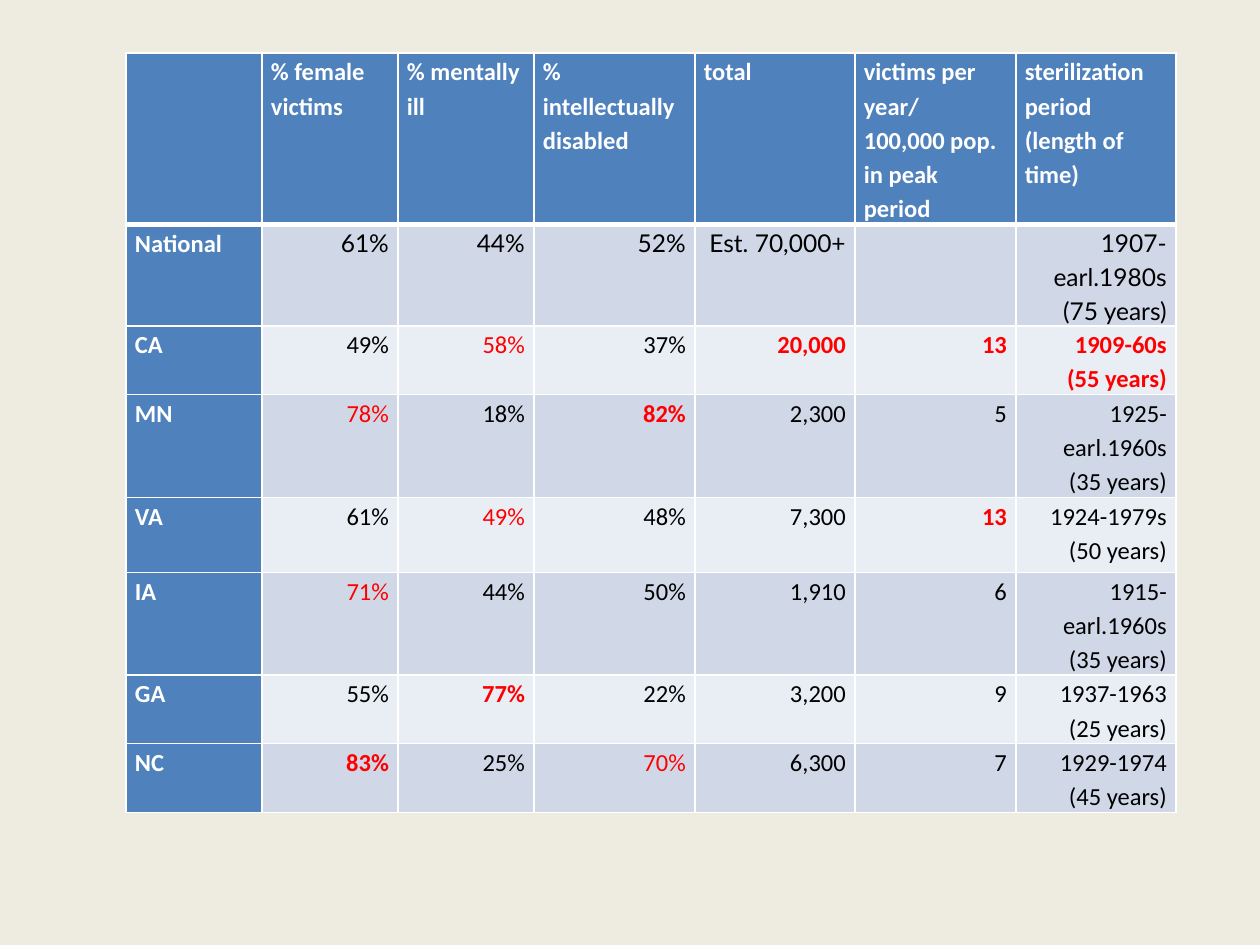
from lxml import etree
from pptx import Presentation
from pptx import util as u
from pptx.dml.color import RGBColor
from pptx.enum import text
from pptx.oxml import ns

HEADERS = [
    "", "% female victims", "% mentally\nill", "% intellectually\ndisabled", "total",
    "victims per year/\n100,000 pop.\nin peak period",
    "sterilization period (length of time)",
]
ROWS = [
    ["National", "61%", "44%", "52%", "Est. 70,000+", "", "1907-earl.1980s\n(75 years)"],
    ["CA", "49%", "58%", "37%", "20,000", "13", "1909-60s\n(55 years)"],
    ["MN", "78%", "18%", "82%", "2,300", "5", "1925-earl.1960s\n(35 years)"],
    ["VA", "61%", "49%", "48%", "7,300", "13", "1924-1979s\n(50 years)"],
    ["IA", "71%", "44%", "50%", "1,910", "6", "1915-earl.1960s\n(35 years)"],
    ["GA", "55%", "77%", "22%", "3,200", "9", "1937-1963 (25 years)"],
    ["NC", "83%", "25%", "70%", "6,300", "7", "1929-1974 (45 years)"],
]
HIGH = {("CA", 2), ("MN", 1), ("VA", 2), ("IA", 1), ("NC", 3)}
HIGHEST = {("CA", 4), ("CA", 5), ("CA", 6), ("MN", 3), ("VA", 5), ("GA", 2), ("NC", 1)}
COLORS = {
    "background": "EEECE1", "header": "4F81BD", "odd": "D0D8E8", "even": "E9EDF4",
    "white": "FFFFFF", "black": "000000", "red": "FF0000",
}
PX = 914400 // 126
LEFT, TOP = 126, 53
COL_WIDTHS = [136] * 3 + [161, 160] * 2
ROW_HEIGHTS = [159, 94, 62, 94, 75, 94, 62, 62]
SIDE_MARGIN = 9


def rgb(name):
    return RGBColor.from_string(COLORS[name])


def write(tf, content, font="Calibri", color="black", bold=False, align="LEFT"):
    tf.word_wrap = True
    for i, line in enumerate(content.split("\n")):
        p = tf.paragraphs[0] if i == 0 else tf.add_paragraph()
        p.alignment = getattr(text.PP_ALIGN, align)
        p.line_spacing = 1.15
        r = p.add_run()
        r.text = line
        r.font.name = font
        r.font.size = u.Pt(14)
        r.font.bold = bold
        r.font.color.rgb = rgb(color)


def add_borders(cell, **widths):
    tc_pr = cell._tc.get_or_add_tcPr()
    for side in "LRTB":
        ln = etree.SubElement(tc_pr, ns.qn(f"a:ln{side}"), w=str(u.Pt(widths.get(side, 1))))
        fill = etree.SubElement(ln, ns.qn("a:solidFill"))
        etree.SubElement(fill, ns.qn("a:srgbClr"), val=COLORS["white"])


def style_cell(cell, row, col):
    cell.margin_left = cell.margin_right = SIDE_MARGIN * PX
    cell.margin_top = cell.margin_bottom = 0
    add_borders(cell, T=3 if row == 1 else 1, B=3 if row == 0 else 1)
    cell.fill.solid()
    band = "odd" if row % 2 else "even"
    cell.fill.fore_color.rgb = rgb("header" if row == 0 or col == 0 else band)


def text_format(row, col, label):
    if row == 0 or col == 0:
        return dict(color="white", bold=True)
    key = (label, col)
    return dict(
        font="Lato" if label == "National" else "Calibri",
        color="red" if key in HIGH | HIGHEST else "black",
        bold=key in HIGHEST,
        align="RIGHT",
    )


def main():
    prs = Presentation()
    prs.slide_width, prs.slide_height = u.Inches(10), u.Inches(7.5)
    s = prs.slides.add_slide(prs.slide_layouts[6])
    s.background.fill.solid()
    s.background.fill.fore_color.rgb = rgb("background")

    data = [HEADERS] + ROWS
    table = s.shapes.add_table(
        len(data), len(HEADERS), LEFT * PX, TOP * PX,
        sum(COL_WIDTHS) * PX, sum(ROW_HEIGHTS) * PX,
    ).table
    table.first_col = True
    for column, width in zip(table.columns, COL_WIDTHS):
        column.width = width * PX
    for table_row, height in zip(table.rows, ROW_HEIGHTS):
        table_row.height = height * PX

    for row, values in enumerate(data):
        for col, value in enumerate(values):
            cell = table.cell(row, col)
            style_cell(cell, row, col)
            if value:
                write(cell.text_frame, value, **text_format(row, col, values[0]))

    prs.save("out.pptx")


if __name__ == "__main__":
    main()
